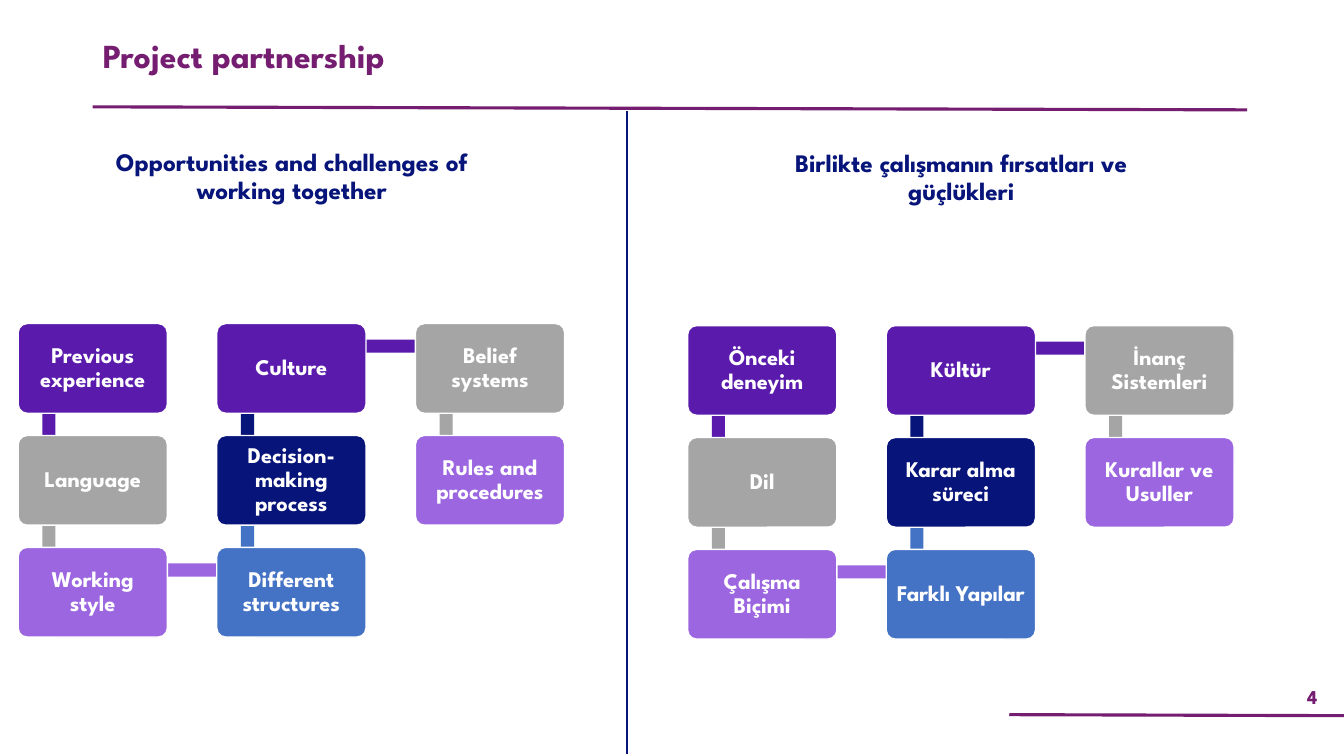
from itertools import pairwise

from lxml import etree
from pptx import Presentation
from pptx.dml.color import RGBColor
from pptx.enum.shapes import MSO_CONNECTOR, MSO_SHAPE
from pptx.enum.text import MSO_ANCHOR, MSO_AUTO_SIZE, PP_ALIGN
from pptx.oxml.ns import qn
from pptx.util import Inches, Pt

STRAIGHT = MSO_CONNECTOR.STRAIGHT
RECTANGLE, ROUNDED = MSO_SHAPE.RECTANGLE, MSO_SHAPE.ROUNDED_RECTANGLE
TOP, MIDDLE = MSO_ANCHOR.TOP, MSO_ANCHOR.MIDDLE
LEFT, CENTER = PP_ALIGN.LEFT, PP_ALIGN.CENTER
NO_AUTOFIT = MSO_AUTO_SIZE.NONE

FONT = "League Spartan"
PLUM, NAVY, PURPLE = "751D70", "07147A", "5A1BAD"
GREY, LILAC, BLUE, WHITE = "A5A5A5", "9B66E0", "4472C4", "FFFFFF"

BOX_W, BOX_H = 1.48, 0.89
COLUMN_STEP, ROW_STEP = 1.97, 1.11
LINK_THICKNESS = 0.13

# Column, row and colour of each box, in the order the chain runs
CHAIN = [
    (0, 0, PURPLE), (0, 1, GREY), (0, 2, LILAC),
    (1, 2, BLUE), (1, 1, NAVY), (1, 0, PURPLE),
    (2, 0, GREY), (2, 1, LILAC),
]
ENGLISH = ["Previous experience", "Language", "Working style",
           "Different structures", "Decision-making process", "Culture",
           "Belief systems", "Rules and procedures"]
TURKISH = ["Önceki deneyim", "Dil", "Çalışma Biçimi", "Farklı Yapılar",
           "Karar alma süreci", "Kültür", "İnanç Sistemleri",
           "Kurallar ve Usuller"]


def rgb(hex_colour):
    return RGBColor.from_string(hex_colour)


def write_text(shape, text, *, size, colour, align=CENTER, anchor=MIDDLE,
               margin=None, line_spacing=0.9):
    frame = shape.text_frame
    frame.word_wrap = True
    frame.auto_size = NO_AUTOFIT
    frame.vertical_anchor = anchor
    if margin is not None:
        frame.margin_left = frame.margin_right = Inches(margin)
        frame.margin_top = frame.margin_bottom = Inches(margin)
    frame.text = text
    paragraph = frame.paragraphs[0]
    paragraph.alignment = align
    paragraph.line_spacing = line_spacing
    paragraph.space_before = Pt(0)
    font = paragraph.runs[0].font
    font.name, font.size, font.bold = FONT, Pt(size), True
    font.color.rgb = rgb(colour)


def fill_placeholder(placeholder, text, left, top, width, height, **text_format):
    placeholder.left, placeholder.top = Inches(left), Inches(top)
    placeholder.width, placeholder.height = Inches(width), Inches(height)
    write_text(placeholder, text, anchor=TOP, **text_format)
    properties = placeholder.text_frame.paragraphs[0]._p.get_or_add_pPr()
    properties.set("marL", "0")
    properties.set("indent", "0")
    etree.SubElement(properties, qn("a:buNone"))


def add_rule(slide, x1, y1, x2, y2, colour, weight):
    rule = slide.shapes.add_connector(
        STRAIGHT, Inches(x1), Inches(y1), Inches(x2), Inches(y2))
    rule.line.color.rgb = rgb(colour)
    rule.line.width = Pt(weight)
    etree.SubElement(rule._element.spPr, qn("a:effectLst"))


def add_block(slide, kind, left, top, width, height, colour):
    block = slide.shapes.add_shape(
        kind, Inches(left), Inches(top), Inches(width), Inches(height))
    block.shadow.inherit = False
    block.fill.solid()
    block.fill.fore_color.rgb = rgb(colour)
    block.line.fill.background()
    return block


def add_link(slide, left, top, start, end):
    """Bar between two neighbouring boxes, in the colour of the first."""
    x = left + min(start[0], end[0]) * COLUMN_STEP
    y = top + min(start[1], end[1]) * ROW_STEP
    if start[1] == end[1]:
        place = (x + 0.31, y + 0.16, 1.96, LINK_THICKNESS)
    else:
        place = (x + 0.24, y + 0.22, LINK_THICKNESS, 1.1)
    add_block(slide, RECTANGLE, *place, start[2])


def add_chain(slide, left, top, labels):
    for start, end in pairwise(CHAIN):
        add_link(slide, left, top, start, end)
    for (column, row, colour), label in zip(CHAIN, labels):
        box = add_block(slide, ROUNDED, left + column * COLUMN_STEP,
                        top + row * ROW_STEP, BOX_W, BOX_H, colour)
        box.adjustments[0] = 0.1
        box.line.color.rgb = rgb(WHITE)
        box.line.width = Pt(1)
        write_text(box, label, size=16, colour=WHITE, margin=0.07)


def main():
    prs = Presentation()
    prs.slide_width, prs.slide_height = Inches(13.33), Inches(7.5)
    slide = prs.slides.add_slide(prs.slide_layouts.get_by_name("Two Content"))
    title, english_heading, turkish_heading = slide.placeholders

    add_rule(slide, 0.92, 1.06, 12.37, 1.09, PLUM, 2.25)
    add_rule(slide, 10.01, 7.09, 13.35, 7.1, PLUM, 2.25)
    add_rule(slide, 6.22, 7.48, 6.22, 1.1, NAVY, 1.5)

    fill_placeholder(title, "Project partnership", 0.92, 0.34, 9.73, 0.65,
                     size=24, colour=PLUM, align=LEFT)
    fill_placeholder(english_heading,
                     "Opportunities and challenges of working together",
                     0.92, 1.44, 3.95, 5.43, size=18, colour=NAVY)
    fill_placeholder(turkish_heading,
                     "Birlikte çalışmanın fırsatları ve güçlükleri",
                     7.56, 1.45, 3.95, 5.43, size=18, colour=NAVY)

    add_chain(slide, 0.18, 3.21, ENGLISH)
    add_chain(slide, 6.82, 3.23, TURKISH)

    page_number = slide.shapes.add_textbox(
        Inches(12.7), Inches(6.73), Inches(0.63), Inches(0.36))
    write_text(page_number, "4", size=14, colour=PLUM, line_spacing=1.0)

    prs.save("out.pptx")


if __name__ == "__main__":
    main()
